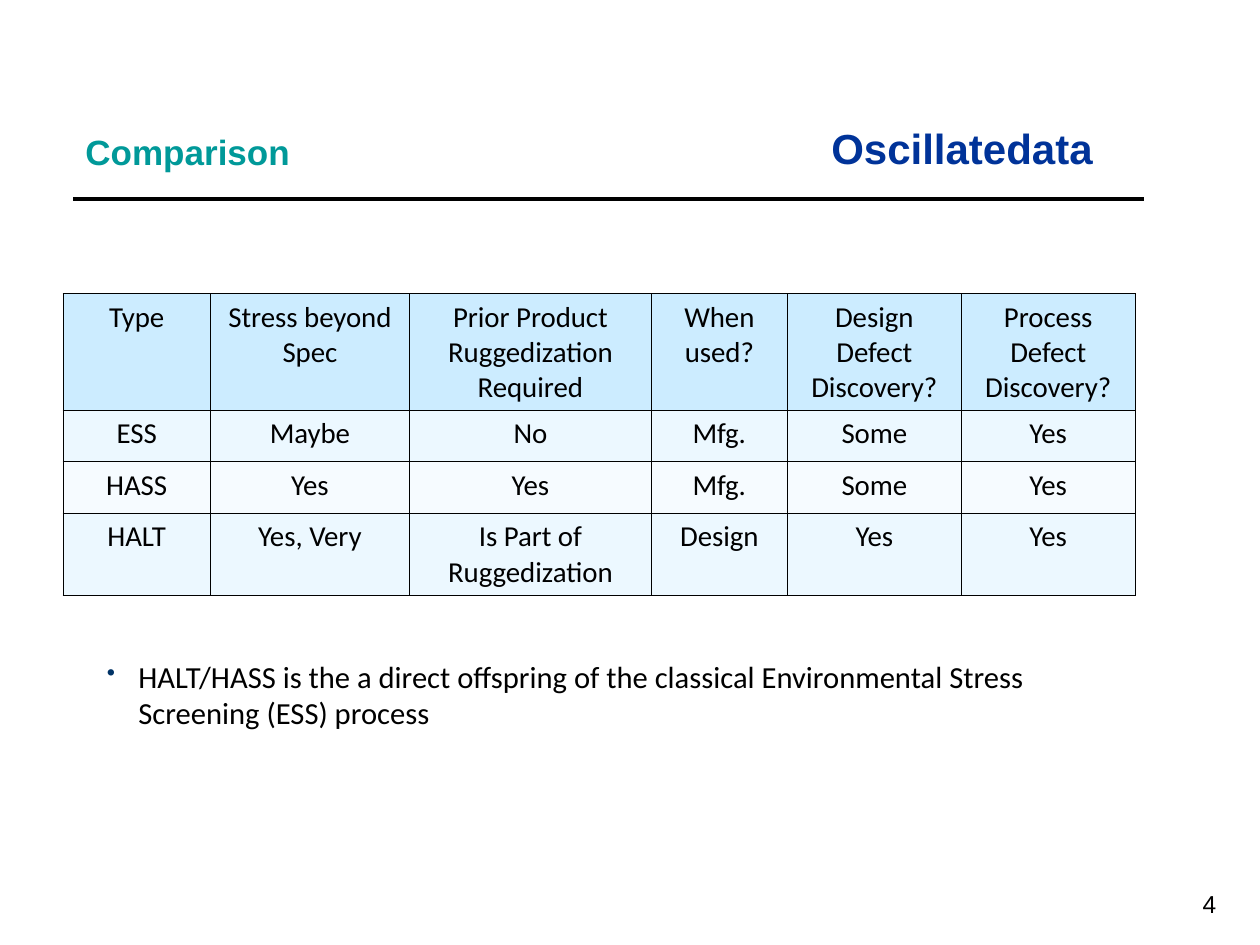
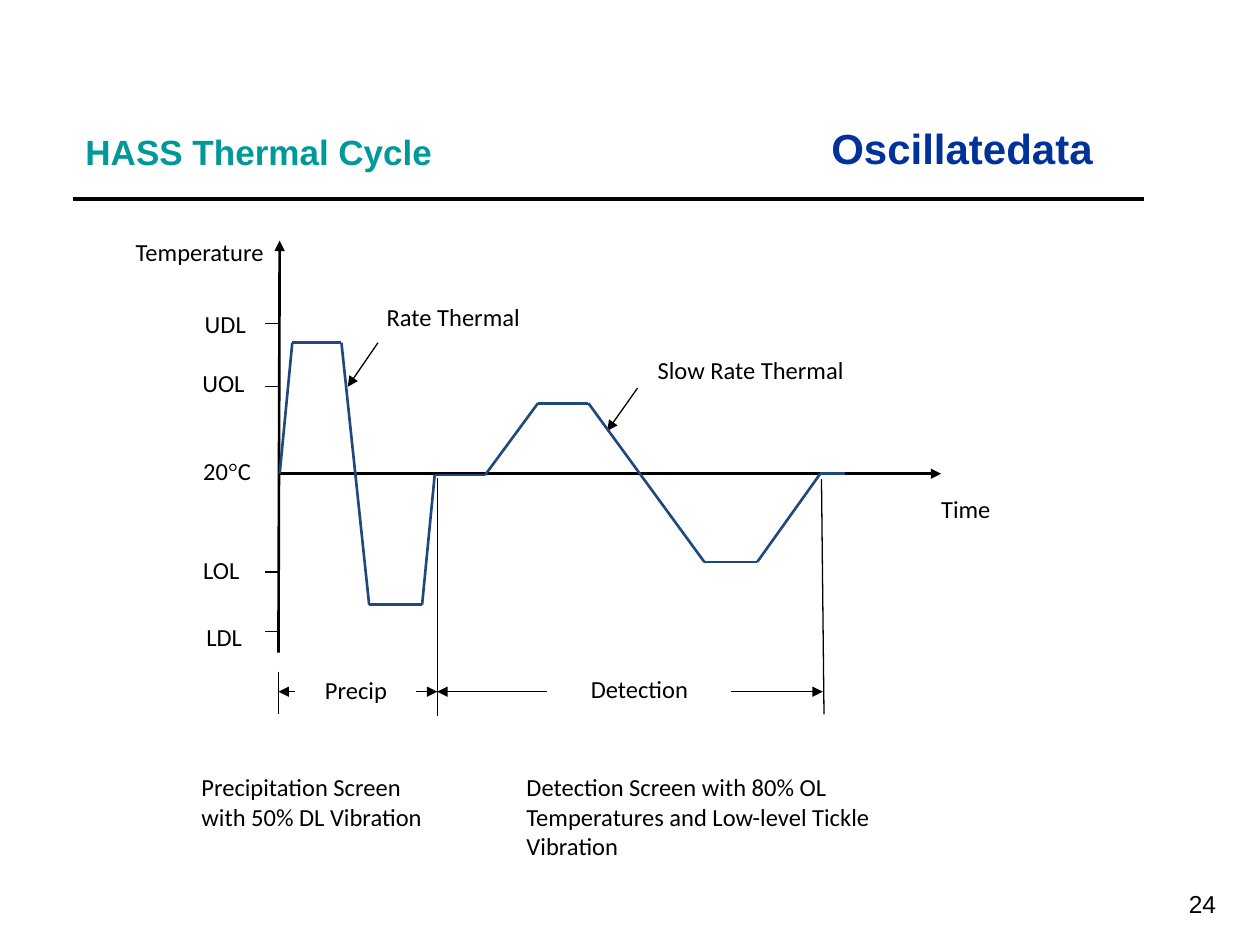
from dataclasses import dataclass
from itertools import pairwise

from lxml.etree import SubElement
from pptx import Presentation
from pptx.dml.color import RGBColor
from pptx.enum.shapes import MSO_CONNECTOR, MSO_SHAPE
from pptx.enum.text import MSO_ANCHOR, PP_ALIGN
from pptx.oxml.ns import qn
from pptx.slide import Slide
from pptx.table import _Cell as Cell
from pptx.text.text import TextFrame
from pptx.util import Emu, Pt

EMU_PER_PX = 9144  # 100 px to the inch
LEFT, CENTER, RIGHT = PP_ALIGN.LEFT, PP_ALIGN.CENTER, PP_ALIGN.RIGHT


@dataclass(frozen=True)
class TextStyle:
    size: float
    color: str = "000000"
    font: str = "Calibri"
    bold: bool = False


@dataclass(frozen=True)
class Theme:
    ink: str = "000000"
    paper: str = "FFFFFF"
    curve: str = "1F497D"
    bullet: str = "003366"
    header_fill: str = "CCECFF"
    row_fills: tuple[str, ...] = ("ECF8FF", "F6FBFF")
    symbol_font: str = "Times New Roman"
    thin: float = 0.75
    medium: float = 1.5
    thick: float = 2.25
    title: TextStyle = TextStyle(20, "009999", "Arial", True)
    brand: TextStyle = TextStyle(24, "003399", "Arial", True)
    number: TextStyle = TextStyle(14, "010000", "Arial")
    body: TextStyle = TextStyle(17.5)
    cell: TextStyle = TextStyle(16.5)
    label: TextStyle = TextStyle(14)


THEME = Theme()


@dataclass(frozen=True)
class Box:
    left: int
    top: int
    width: int
    height: int

    def emu(self) -> tuple[Emu, ...]:
        return tuple(px(n) for n in (self.left, self.top, self.width, self.height))


@dataclass(frozen=True)
class Label:
    text: str
    box: Box
    align: PP_ALIGN = LEFT
    space_after: int = 0


@dataclass(frozen=True)
class Segment:
    start: tuple[int, int]
    end: tuple[int, int]
    weight: float = THEME.thin
    color: str = THEME.ink
    head: bool = False
    tail: bool = False


@dataclass(frozen=True)
class Limit:
    text: str
    tick_y: int
    left: int
    top: int


def px(length: int) -> Emu:
    return Emu(length * EMU_PER_PX)


# Drawing helpers
def write(frame: TextFrame, text: str, style: TextStyle, align: PP_ALIGN = LEFT) -> None:
    """Set one paragraph; a degree sign gets the symbol font."""
    frame.word_wrap = True
    paragraph = frame.paragraphs[0]
    start, *rest = text.partition("°")
    paragraph.text = start
    for piece in filter(None, rest):
        paragraph.add_run().text = piece
    paragraph.alignment = align
    for run in paragraph.runs:
        run.font.size = Pt(style.size)
        run.font.bold = style.bold
        run.font.name = THEME.symbol_font if run.text == "°" else style.font
        run.font.color.rgb = RGBColor.from_string(style.color)


def add_text(slide: Slide, text: str, box: Box, style: TextStyle,
             align: PP_ALIGN = LEFT) -> TextFrame:
    frame = slide.shapes.add_textbox(*box.emu()).text_frame
    write(frame, text, style, align)
    return frame


def add_label(slide: Slide, label: Label) -> None:
    plate = slide.shapes.add_shape(MSO_SHAPE.RECTANGLE, *label.box.emu())
    plate.shadow.inherit = False
    plate.fill.solid()
    plate.fill.fore_color.rgb = RGBColor.from_string(THEME.paper)
    plate.line.color.rgb = RGBColor.from_string(THEME.paper)
    plate.line.width = Pt(THEME.thin)
    write(plate.text_frame, label.text, THEME.label, label.align)
    plate.text_frame.vertical_anchor = MSO_ANCHOR.TOP
    plate.text_frame.paragraphs[0].space_after = Pt(label.space_after)


def add_segment(slide: Slide, segment: Segment) -> None:
    ends = (px(n) for n in (*segment.start, *segment.end))
    connector = slide.shapes.add_connector(MSO_CONNECTOR.STRAIGHT, *ends)
    connector.line.width = Pt(segment.weight)
    connector.line.color.rgb = RGBColor.from_string(segment.color)
    properties = connector.element.spPr
    outline = properties.find(qn("a:ln"))
    for tag, wanted in (("a:headEnd", segment.head), ("a:tailEnd", segment.tail)):
        if wanted:
            SubElement(outline, qn(tag), type="triangle")
    SubElement(properties, qn("a:effectLst"))


def add_bullet(frame: TextFrame) -> None:
    properties = frame.paragraphs[0]._p.get_or_add_pPr()
    properties.set("marL", str(px(25)))
    properties.set("indent", str(-px(25)))
    color = SubElement(properties, qn("a:buClr"))
    SubElement(color, qn("a:srgbClr"), val=THEME.bullet)
    SubElement(properties, qn("a:buSzPct"), val="80000")
    SubElement(properties, qn("a:buChar"), char="•")


def style_cell(cell: Cell, text: str, fill: str) -> None:
    write(cell.text_frame, text, THEME.cell, CENTER)
    properties = cell._tc.get_or_add_tcPr()
    for side in ("a:lnL", "a:lnR", "a:lnT", "a:lnB"):
        border = SubElement(properties, qn(side), w=str(Pt(0.5)))
        paint = SubElement(border, qn("a:solidFill"))
        SubElement(paint, qn("a:srgbClr"), val=THEME.ink)
    cell.fill.solid()
    cell.fill.fore_color.rgb = RGBColor.from_string(fill)


def add_page(deck: Presentation, title: str, number: int) -> Slide:
    """Blank slide with the shared title, brand, rule and page number."""
    slide = deck.slides.add_slide(deck.slide_layouts[6])
    page_number = add_text(slide, str(number), Box(767, 692, 208, 50), THEME.number, RIGHT)
    page_number.vertical_anchor = MSO_ANCHOR.MIDDLE
    add_segment(slide, Segment((58, 158), (908, 158), THEME.thick))
    heading = add_text(slide, title, Box(58, 108, 500, 42), THEME.title)
    heading.paragraphs[0].line_spacing = 0.7
    add_text(slide, "Oscillatedata", Box(650, 92, 233, 50), THEME.brand)
    return slide


# Comparison slide
COLUMN_WIDTHS = (117, 158, 192, 108, 138, 138)
ROW_HEIGHTS = (92, 41, 41, 65)
COMPARISON = (
    ("Type", "Stress beyond Spec", "Prior Product Ruggedization Required",
     "When used?", "Design Defect Discovery?", "Process Defect Discovery?"),
    ("ESS", "Maybe", "No", "Mfg.", "Some", "Yes"),
    ("HASS", "Yes", "Yes", "Mfg.", "Some", "Yes"),
    ("HALT", "Yes, Very", "Is Part of Ruggedization", "Design", "Yes", "Yes"),
)


def build_comparison(deck: Presentation) -> None:
    slide = add_page(deck, "Comparison", 4)
    offspring = add_text(
        slide, "HALT/HASS is the a direct offspring of the classical "
        "Environmental Stress Screening (ESS) process",
        Box(75, 517, 825, 69), THEME.body)
    add_bullet(offspring)

    area = Box(50, 233, sum(COLUMN_WIDTHS), sum(ROW_HEIGHTS))
    table = slide.shapes.add_table(len(ROW_HEIGHTS), len(COLUMN_WIDTHS), *area.emu()).table
    table.first_row = table.horz_banding = False
    for column, width in zip(table.columns, COLUMN_WIDTHS):
        column.width = px(width)
    for row, height in zip(table.rows, ROW_HEIGHTS):
        row.height = px(height)
    for r, entries in enumerate(COMPARISON):
        fill = THEME.row_fills[(r - 1) % 2] if r else THEME.header_fill
        for c, entry in enumerate(entries):
            style_cell(table.cell(r, c), entry, fill)


# Thermal cycle slide
AXIS_X, AXIS_Y, SPAN_Y = 221, 376, 549
PRECIP_END, DETECTION_END = 347, 653
CYCLE = (
    (222, 376), (232, 272), (271, 272), (293, 480), (335, 480), (345, 377),
    (385, 377), (427, 320), (467, 320), (559, 446), (601, 446), (651, 376),
    (671, 376),
)
CALLOUTS = (
    Label("Temperature", Box(92, 183, 133, 38), CENTER, 6),
    Label("Rate Thermal", Box(297, 235, 172, 38), space_after=6),
    Label("Slow Rate Thermal", Box(512, 277, 172, 38), space_after=6),
)
POINTERS = (
    Segment((300, 272), (276, 307), tail=True),
    Segment((506, 308), (482, 342), tail=True),
)
AXES = (
    Segment((222, AXIS_Y), (747, AXIS_Y), THEME.medium, tail=True),
    Segment((AXIS_X, 518), (222, 191), THEME.medium, tail=True),
)
PHASE_LINES = (
    Segment((AXIS_X, 533), (AXIS_X, 567)),
    Segment((PRECIP_END, 379), (PRECIP_END, 568)),
    Segment((652, 380), (654, 567)),
    Segment((AXIS_X, SPAN_Y), (PRECIP_END, SPAN_Y), head=True, tail=True),
    Segment((PRECIP_END, SPAN_Y), (DETECTION_END, SPAN_Y), head=True, tail=True),
)
LIMITS = (
    Limit("UDL", 257, 120, 240),
    Limit("UOL", 307, 119, 287),
    Limit("LOL", 454, 115, 436),
    Limit("LDL", 501, 117, 489),
)
LABELS = (
    Label("Time", Box(724, 387, 85, 36), CENTER, 10),
    Label("20°C", Box(124, 357, 85, 36), RIGHT, 10),
    Label("Detection", Box(435, 530, 145, 42), CENTER, 10),
    Label("Precip", Box(235, 531, 95, 42), CENTER, 10),
    Label("Precipitation Screen with 50% DL Vibration", Box(150, 608, 209, 86)),
    Label("Detection Screen with 80% OL Temperatures and Low-level Tickle Vibration",
          Box(408, 608, 292, 113), space_after=6),
)


def build_thermal_cycle(deck: Presentation) -> None:
    slide = add_page(deck, "HASS Thermal Cycle", 24)
    for callout in CALLOUTS:
        add_label(slide, callout)

    # Axes, temperature curve and phase spans
    cycle = tuple(Segment(a, b, THEME.medium, THEME.curve) for a, b in pairwise(CYCLE))
    for segment in POINTERS + AXES + cycle + PHASE_LINES:
        add_segment(slide, segment)

    # Limits on the temperature axis
    for limit in LIMITS:
        add_segment(slide, Segment((AXIS_X, limit.tick_y), (AXIS_X - 11, limit.tick_y)))
        add_label(slide, Label(limit.text, Box(limit.left, limit.top, 85, 36), RIGHT, 10))

    for label in LABELS:
        add_label(slide, label)


def main() -> None:
    deck = Presentation()
    deck.slide_width, deck.slide_height = px(1000), px(750)
    build_comparison(deck)
    build_thermal_cycle(deck)
    deck.save("out.pptx")


if __name__ == "__main__":
    main()
